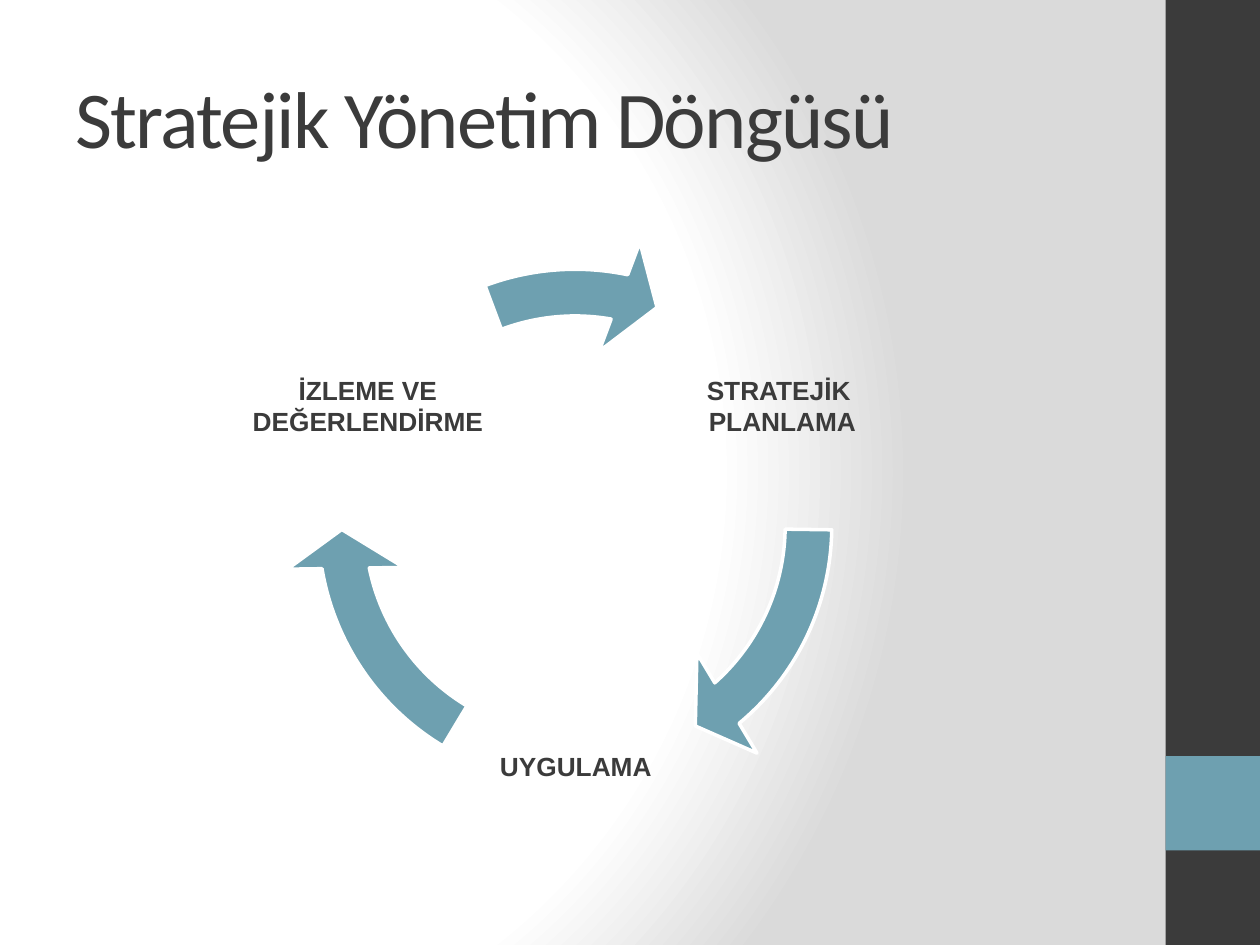
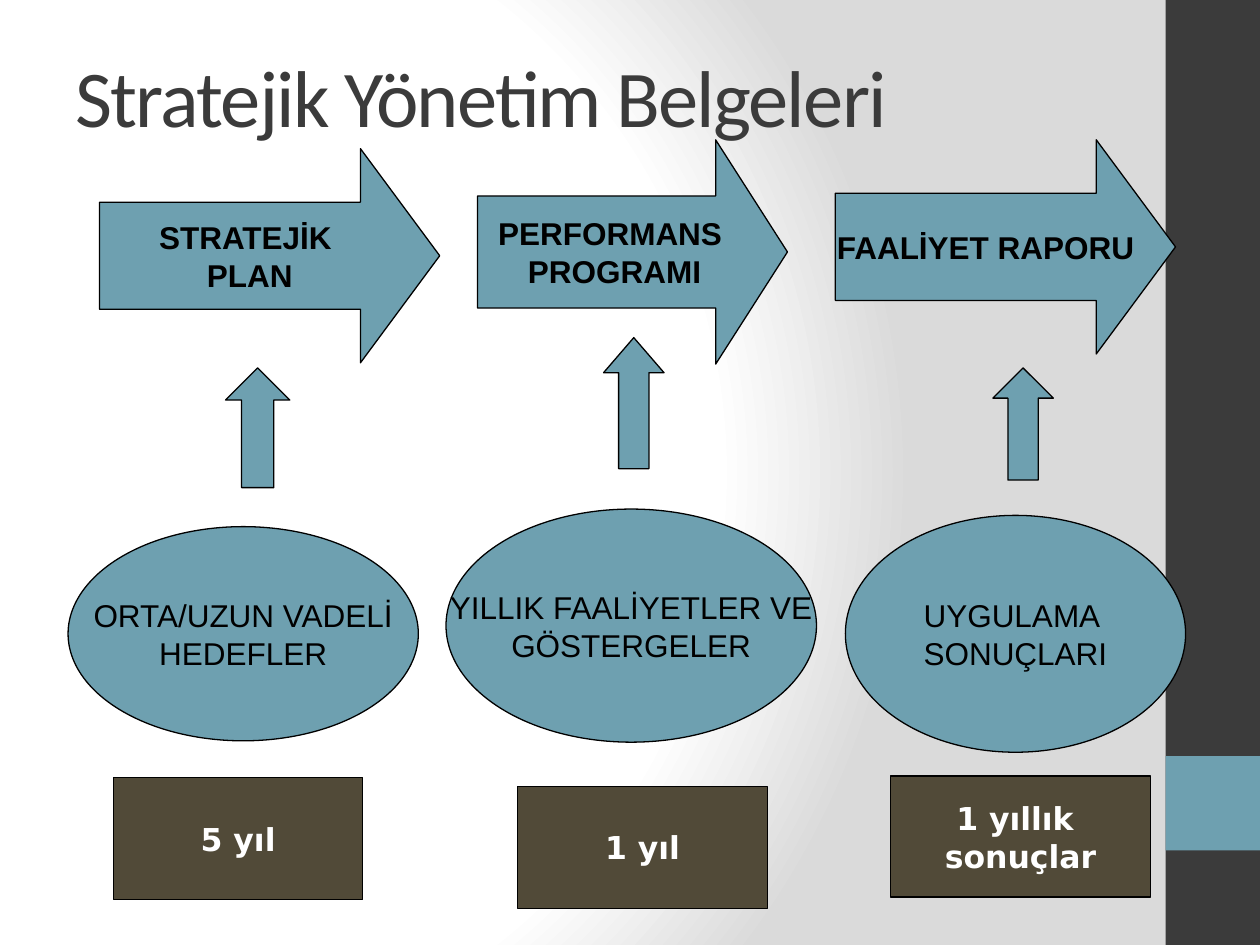
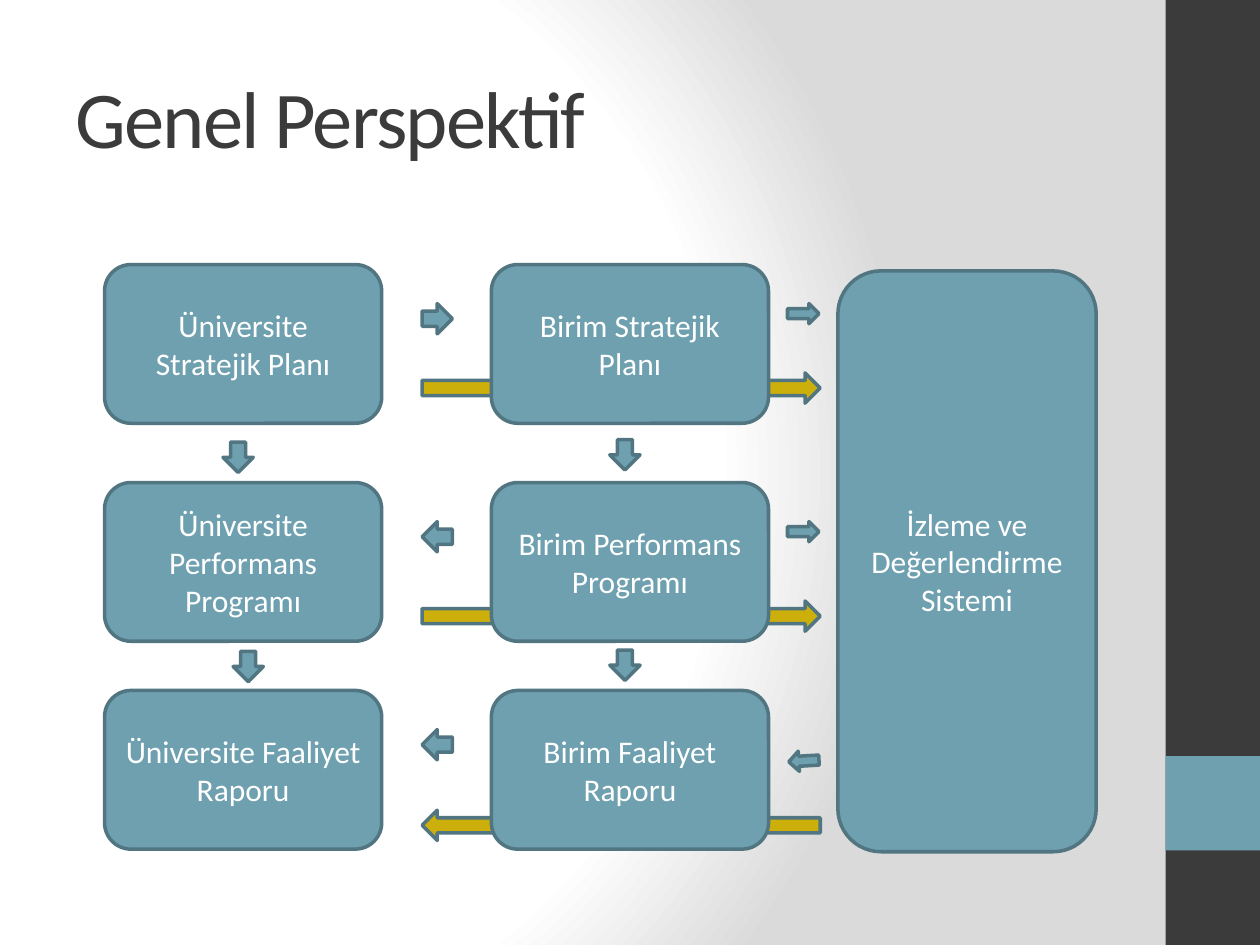
from dataclasses import dataclass

from pptx import Presentation
from pptx.dml.color import RGBColor
from pptx.enum.shapes import MSO_SHAPE
from pptx.enum.text import MSO_ANCHOR, PP_ALIGN
from pptx.oxml import parse_xml
from pptx.oxml.ns import nsdecls, qn
from pptx.util import Inches, Pt

RECT = MSO_SHAPE.RECTANGLE
PROCESS = MSO_SHAPE.FLOWCHART_PROCESS
ROUNDED = MSO_SHAPE.ROUNDED_RECTANGLE
OVAL = MSO_SHAPE.OVAL
RIGHT = MSO_SHAPE.RIGHT_ARROW
UP = MSO_SHAPE.UP_ARROW
DOWN = MSO_SHAPE.DOWN_ARROW
CIRCULAR = MSO_SHAPE.CIRCULAR_ARROW
MIDDLE = MSO_ANCHOR.MIDDLE
LEFT_ALIGN, CENTER = PP_ALIGN.LEFT, PP_ALIGN.CENTER

COLUMNS, ROWS = 40, 30
CELL = 0.25


@dataclass(frozen=True)
class Type:
    font: str
    size: int
    color: str
    bold: bool = False


@dataclass(frozen=True)
class Theme:
    white: str = "FFFFFF"
    mist: str = "DADADA"
    dark: str = "3B3B3B"
    teal: str = "6EA0B0"
    teal_edge: str = "517682"
    gold: str = "CCAF0A"
    brown: str = "514A38"
    black: str = "000000"
    thin: float = 0.75
    thick: float = 2
    title: Type = Type("Calibri", 46, "3B3B3B")
    stage: Type = Type("Arial", 15, "3B3B3B", True)
    document: Type = Type("Arial", 18, "000000", True)
    content: Type = Type("Arial", 18, "000000")
    period: Type = Type("DejaVu Sans", 18, "FFFFFF", True)
    step: Type = Type("Calibri", 18, "FFFFFF")


THEME = Theme()


@dataclass(frozen=True)
class Box:
    left: float
    top: float
    width: float
    height: float

    def area(self, left, top, width, height):
        return Box(self.left + left, self.top + top, width, height)

    def inches(self):
        return [Inches(n * CELL) for n in (self.left, self.top, self.width, self.height)]


PAGE = Box(0, 0, COLUMNS, ROWS)


def write(frame, text, style, align=CENTER, wrap=True):
    frame.text = text
    frame.word_wrap = wrap
    frame.vertical_anchor = MIDDLE
    for paragraph in frame.paragraphs:
        paragraph.alignment = align
        paragraph.font.name = style.font
        paragraph.font.size = Pt(style.size)
        paragraph.font.bold = style.bold
        paragraph.font.color.rgb = RGBColor.from_string(style.color)


def draw(slide, kind, box, fill, edge=None, weight=0, adjust=(), turn=0):
    figure = slide.shapes.add_shape(kind, *box.inches())
    figure.shadow.inherit = False
    figure.fill.solid()
    figure.fill.fore_color.rgb = RGBColor.from_string(fill)
    if edge:
        figure.line.color.rgb = RGBColor.from_string(edge)
        figure.line.width = Pt(weight)
    else:
        figure.line.fill.background()
    for index, value in enumerate(adjust):
        figure.adjustments[index] = value
    figure.rotation = turn
    return figure


def draw_backdrop(master):
    master.background.fill.gradient()
    stops = "".join(
        f'<a:gs pos="{share * 1000}"><a:srgbClr val="{color}"/></a:gs>'
        for share, color in ((0, THEME.white), (75, THEME.white), (100, THEME.mist))
    )
    gradient = parse_xml(
        f'<a:gradFill {nsdecls("a")} rotWithShape="1"><a:gsLst>{stops}</a:gsLst>'
        '<a:path path="circle"><a:fillToRect l="20000" t="50000" r="100000" b="50000"/>'
        "</a:path></a:gradFill>"
    )
    default = next(master.element.iter(qn("a:gradFill")))
    default.getparent().replace(default, gradient)


def start_slide(prs):
    slide = prs.slides.add_slide(prs.slide_layouts[6])
    side = PAGE.area(COLUMNS - 3, 0, 3, ROWS)
    draw(slide, RECT, side, THEME.dark)
    draw(slide, RECT, side.area(0, ROWS - 6, 3, 3), THEME.teal)
    return slide


def draw_title(slide, text, top=1.2):
    heading = slide.shapes.add_textbox(*PAGE.area(2, top, 33.32, 5).inches())
    write(heading.text_frame, text, THEME.title, LEFT_ALIGN)
    for run in heading.text_frame.paragraphs[0].runs:
        run._r.get_or_add_rPr().set("spc", "-100")


def draw_cycle(slide, box):
    stages = (
        ("STRATEJİK \nPLANLAMA", 13.16, 1.52, 49.4, 0.86),
        ("UYGULAMA", 6.6, 12.96, 169.54, 121),
        ("İZLEME VE DEĞERLENDİRME", 0, 1.52, 280.95, 249.45),
    )
    for text, left, top, head_angle, tail_angle in stages:
        label = slide.shapes.add_textbox(*box.area(left, top, 7.84, 7.84).inches())
        frame = label.text_frame
        write(frame, text, THEME.stage)
        frame.margin_left = frame.margin_right = Inches(0.02)
        frame.margin_top = frame.margin_bottom = Inches(0.02)
        angles = [degrees * 0.6 for degrees in (9.6, head_angle, tail_angle)]
        draw(slide, CIRCULAR, box.area(1.24, 0, 18.52, 18.52), THEME.teal,
             THEME.white, THEME.thick, (0.08, *angles, 0.1))


@dataclass(frozen=True)
class Document:
    name: str
    content: str
    period: str
    banner: tuple
    pointer: tuple
    bubble: tuple
    tag: tuple
    banner_head: float
    pointer_head: float
    tag_kind: int = RECT


DOCUMENTS = (
    Document("STRATEJİK \nPLAN", "ORTA/UZUN VADELİ\nHEDEFLER", "5 yıl",
             (1, 0.28, 10.8, 6.8), (5, 7.24, 2.04, 3.8),
             (0, 12.28, 11.12, 6.8), (1.44, 20.24, 7.92, 3.88), 0.37, 0.5),
    Document("PERFORMANS \nPROGRAMI", "YILLIK FAALİYETLER VE\nGÖSTERGELER", "1 yıl",
             (1, 0, 9.84, 7.12), (5, 6.28, 1.92, 4.16),
             (0, 11.72, 11.76, 7.4), (2.28, 20.52, 7.92, 3.88), 0.32, 0.58, PROCESS),
    Document("FAALİYET RAPORU", "UYGULAMA \nSONUÇLARI", "1 yıllık \nsonuçlar",
             (-0.32, 0, 10.8, 6.8), (4.68, 7.24, 1.92, 3.56),
             (0, 11.92, 10.8, 7.52), (1.44, 20.2, 8.24, 3.84), 0.37, 0.5),
)


def draw_document(slide, box, document):
    pieces = (
        (RIGHT, document.banner, THEME.teal, (0.5, document.banner_head),
         document.name, THEME.document),
        (UP, document.pointer, THEME.teal, (0.5, document.pointer_head), "", None),
        (OVAL, document.bubble, THEME.teal, (), document.content, THEME.content),
        (document.tag_kind, document.tag, THEME.brown, (), document.period, THEME.period),
    )
    for kind, place, fill, adjust, text, style in pieces:
        figure = draw(slide, kind, box.area(*place), fill, THEME.black, THEME.thin, adjust)
        if text:
            write(figure.text_frame, text, style, wrap=False)


def draw_perspective(slide, box):
    def block(kind, place, fill=THEME.teal, turn=0, text=""):
        figure = draw(slide, kind, box.area(*place), fill, THEME.teal_edge,
                      THEME.thick, turn=turn)
        if text:
            write(figure.text_frame, text, THEME.step)

    tops = (0, 6.92, 13.52)
    unit_left = 12.28
    link_left = 10.08
    steps = ("Stratejik Planı", "Performans Programı", "Faaliyet Raporu")

    for top, turn in ((3.44, 0), (10.68, 0), (17.32, 180)):
        block(RIGHT, (link_left, top, 12.64, 0.96), THEME.gold, turn)
    for left, owner in ((0, "Üniversite"), (unit_left, "Birim")):
        for top, step in zip(tops, steps):
            block(ROUNDED, (left, top, 8.8, 5.04), text=f"{owner} {step}")
    block(ROUNDED, (23.28, 0.2, 8.2, 18.44), text="İzleme ve Değerlendirme Sistemi")

    for left, top in ((3.76, 5.64), (4.08, 12.28), (16.04, 5.56), (16.04, 12.24)):
        block(DOWN, (left, top, 0.96, 0.96))
    for top, turn in zip(tops, (0, 180, 180)):
        block(RIGHT, (link_left, top + 1.24, 0.96, 0.96), turn=turn)
    for top in tops[:2]:
        block(RIGHT, (21.68, top + 1.24, 1, 0.64))
    block(DOWN, (21.88, 15.28, 0.64, 0.96), turn=86.7)


def build_cycle_slide(prs):
    slide = start_slide(prs)
    draw_title(slide, "Stratejik Yönetim Döngüsü")
    draw_cycle(slide, PAGE.area(7.76, 7.44, 21, 20.8))


def build_documents_slide(prs):
    slide = start_slide(prs)
    for left, document in zip((2.16, 14.16, 26.84), DOCUMENTS):
        draw_document(slide, PAGE.area(left, 4.44, 12, 25), document)
    draw_title(slide, "Stratejik Yönetim Belgeleri", 0.52)


def build_perspective_slide(prs):
    slide = start_slide(prs)
    draw_title(slide, "Genel Perspektif")
    draw_perspective(slide, PAGE.area(3.32, 8.4, 31.48, 18.64))


def main():
    prs = Presentation()
    prs.slide_width = Inches(COLUMNS * CELL)
    prs.slide_height = Inches(ROWS * CELL)
    draw_backdrop(prs.slide_master)
    build_cycle_slide(prs)
    build_documents_slide(prs)
    build_perspective_slide(prs)
    prs.save("out.pptx")


if __name__ == "__main__":
    main()
